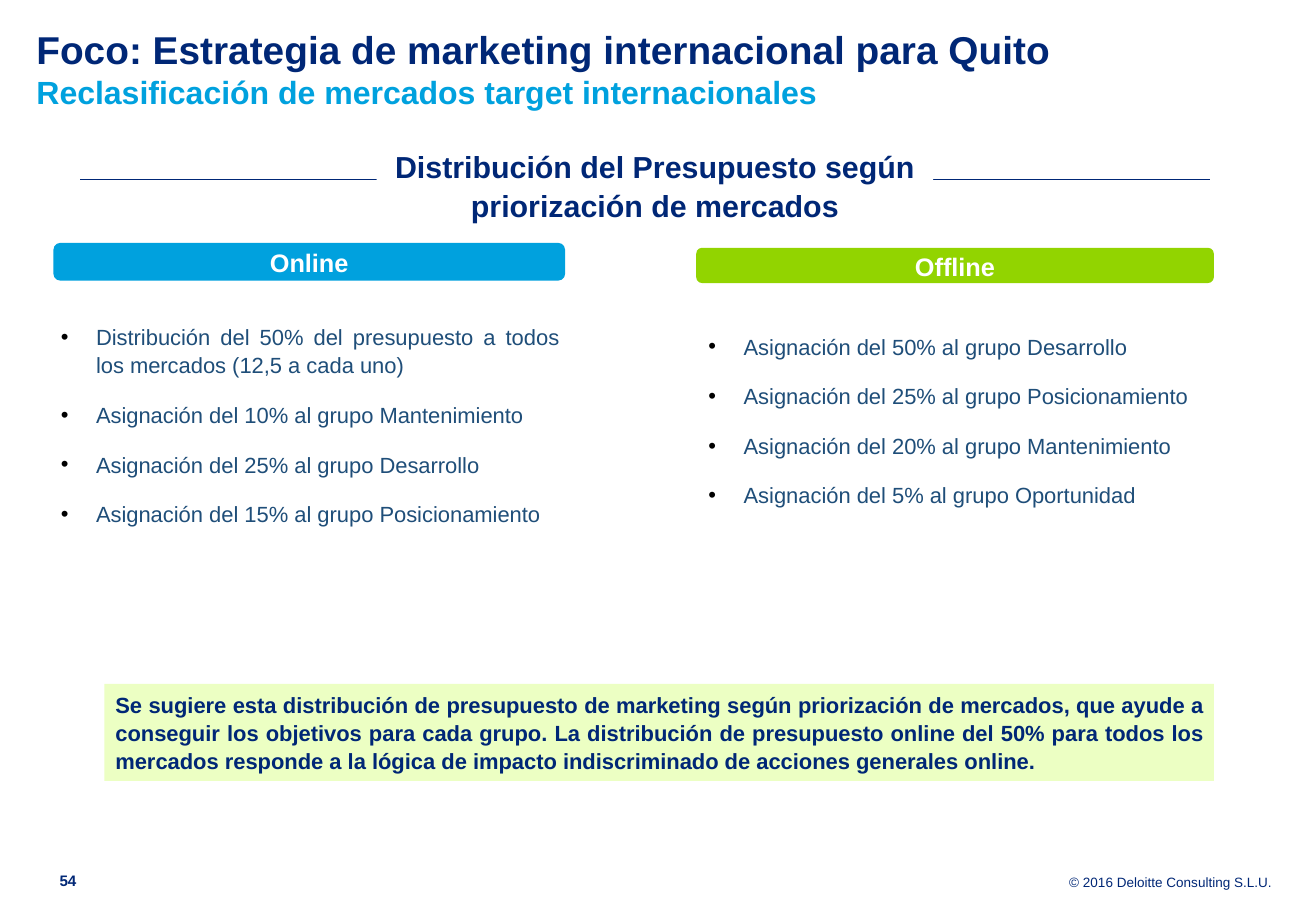
from dataclasses import dataclass

import pptx
import pptx.dml.color
import pptx.enum.shapes
import pptx.enum.text
import pptx.oxml.ns
import pptx.oxml.xmlchemy
import pptx.util
from lxml import etree

Inches, Pt = pptx.util.Inches, pptx.util.Pt
ALIGN = pptx.enum.text.PP_ALIGN
ANCHOR = pptx.enum.text.MSO_ANCHOR
SHAPE = pptx.enum.shapes.MSO_SHAPE
qn = pptx.oxml.ns.qn

COLORS = {"navy": "002776", "sky": "00A1DE", "green": "92D400", "pale": "ECFFC3",
          "blue": "1F4E79", "white": "FFFFFF", "black": "000000"}


@dataclass
class Style:
    size: float
    color: str = "navy"
    bold: bool = True
    align: ALIGN = ALIGN.LEFT
    spacing: object = 1.0
    before: float = 0
    after: float = 0
    bullet: bool = False


@dataclass
class Box:
    at: tuple
    lines: list
    style: Style
    inset: tuple = (0, 0)
    anchor: ANCHOR = ANCHOR.TOP
    wrap: bool = True
    shape: object = None
    fill: str = ""
    outline: bool = False


def rgb(name: str):
    return pptx.dml.color.RGBColor.from_string(COLORS[name])


def add_run(p, text: str, style: Style) -> None:
    r = p.add_run()
    r.text = text
    for name, value in {"name": "Arial", "size": Pt(style.size), "bold": style.bold}.items():
        setattr(r.font, name, value)
    r.font.color.rgb = rgb(style.color)


def add_bullet(p) -> None:
    pPr = p._p.get_or_add_pPr()
    pPr.set("marL", str(Inches(0.3)))
    pPr.set("indent", str(Inches(-0.29)))
    clr = etree.SubElement(pPr, qn("a:buClr"))
    etree.SubElement(clr, qn("a:srgbClr")).set("val", COLORS["black"])
    etree.SubElement(pPr, qn("a:buFont")).set("typeface", "Arial")
    etree.SubElement(pPr, qn("a:buChar")).set("char", "•")


def add_box(s, box: Box):
    at = [Inches(v) for v in box.at]
    if box.shape is None:
        sp = s.shapes.add_textbox(*at)
    else:
        sp = s.shapes.add_shape(box.shape, *at)
        sp.shadow.inherit = False
        sp.fill.solid()
        sp.fill.fore_color.rgb = rgb(box.fill)
        if box.outline:
            sp.line.color.rgb = rgb(box.fill)
            sp.line.width = Pt(1.5)
        else:
            sp.line.fill.background()
    tf = sp.text_frame
    side, edge = (Inches(v) for v in box.inset)
    frame = {"word_wrap": box.wrap, "vertical_anchor": box.anchor, "margin_left": side,
             "margin_right": side, "margin_top": edge, "margin_bottom": edge}
    for name, value in frame.items():
        setattr(tf, name, value)
    style = box.style
    for i, text in enumerate(box.lines):
        p = tf.add_paragraph() if i else tf.paragraphs[0]
        if style.bullet:
            add_bullet(p)
        layout = {"alignment": style.align, "line_spacing": style.spacing,
                  "space_before": Pt(style.before if i else 0), "space_after": Pt(style.after)}
        for name, value in layout.items():
            setattr(p, name, value)
        add_run(p, text, style)
    return sp


def add_rule(s, x1: float, x2: float, y: float) -> None:
    line = s.shapes.add_connector(pptx.enum.shapes.MSO_CONNECTOR.STRAIGHT,
                                  Inches(x1), Inches(y), Inches(x2), Inches(y))
    line.line.color.rgb = rgb("navy")
    line.line.width = Pt(0.75)
    etree.SubElement(line._element.spPr, qn("a:effectLst"))


TITLE = Style(23)
SUBTITLE = Style(19, "sky")
HEADING = Style(18, align=ALIGN.CENTER, spacing=1.06)
LABEL = Style(15, "white", align=ALIGN.CENTER, spacing=1.06)
BULLETS = Style(13, "blue", False, ALIGN.JUSTIFY, 1.07, 5.2, 7.5, True)
NOTE = Style(13, align=ALIGN.JUSTIFY, spacing=1.07, after=7.5)

ONLINE = ["Distribución del 50% del presupuesto a todos los mercados (12,5 a cada uno)",
          "Asignación del 10% al grupo Mantenimiento",
          "Asignación del 25% al grupo Desarrollo",
          "Asignación del 15% al grupo Posicionamiento"]
OFFLINE = ["Asignación del 50% al grupo Desarrollo",
           "Asignación del 25% al grupo Posicionamiento",
           "Asignación del 20% al grupo Mantenimiento",
           "Asignación del 5% al grupo Oportunidad"]
SUGGESTION = ("Se sugiere esta distribución de presupuesto de marketing según priorización de "
              "mercados, que ayude a conseguir los objetivos para cada grupo. La distribución de "
              "presupuesto online del 50% para todos los mercados responde a la lógica de impacto "
              "indiscriminado de acciones generales online.")

BOXES = [
    # Footer
    Box((8.52, 7.21, 1.95, 0.12), ["© 2016 Deloitte Consulting S.L.U."],
        Style(8, bold=False, align=ALIGN.RIGHT), anchor=ANCHOR.BOTTOM, wrap=False),
    Box((0.49, 7.17, 0.34, 0.16), ["54"], Style(9, spacing=Pt(11.3))),
    # Market columns
    Box((5.73, 2.68, 4.58, 1.63), OFFLINE, BULLETS, (0.09, 0.05)),
    Box((0.45, 2.33, 4.19, 2.33), ONLINE, BULLETS, (0.04, 0.05), ANCHOR.MIDDLE),
    Box((0.45, 2.01, 4.19, 0.29), ["Online"], LABEL, (0.04, 0), ANCHOR.MIDDLE,
        shape=SHAPE.ROUNDED_RECTANGLE, fill="sky", outline=True),
    Box((5.73, 2.04, 4.26, 0.29), ["Offline"], LABEL, (0.04, 0), ANCHOR.MIDDLE,
        shape=SHAPE.ROUNDED_RECTANGLE, fill="green"),
    # Section heading, over the rule
    Box((3.1, 1.2, 4.58, 0.64), ["Distribución del Presupuesto según priorización de mercados"],
        HEADING, (0.04, 0), ANCHOR.MIDDLE, shape=SHAPE.RECTANGLE, fill="white"),
    # Suggestion
    Box((0.86, 5.63, 9.13, 0.8), [SUGGESTION], NOTE, (0.09, 0.05),
        shape=SHAPE.RECTANGLE, fill="pale"),
]


def main() -> None:
    prs = pptx.Presentation()
    prs.slide_width, prs.slide_height = Inches(10.83), Inches(7.5)
    s = prs.slides.add_slide(prs.slide_layouts[6])

    # Title and subtitle
    title = add_box(s, Box((0.3, 0.21, 10.2, 0.92),
                           ["Foco: Estrategia de marketing internacional para Quito"], TITLE))
    p = title.text_frame.paragraphs[0]
    p.add_line_break()
    add_run(p, "Reclasificación de mercados target internacionales", SUBTITLE)

    # Rule and text boxes
    add_rule(s, 0.66, 9.96, 1.48)
    for box in BOXES:
        add_box(s, box)
    prs.save("out.pptx")


if __name__ == "__main__":
    main()
